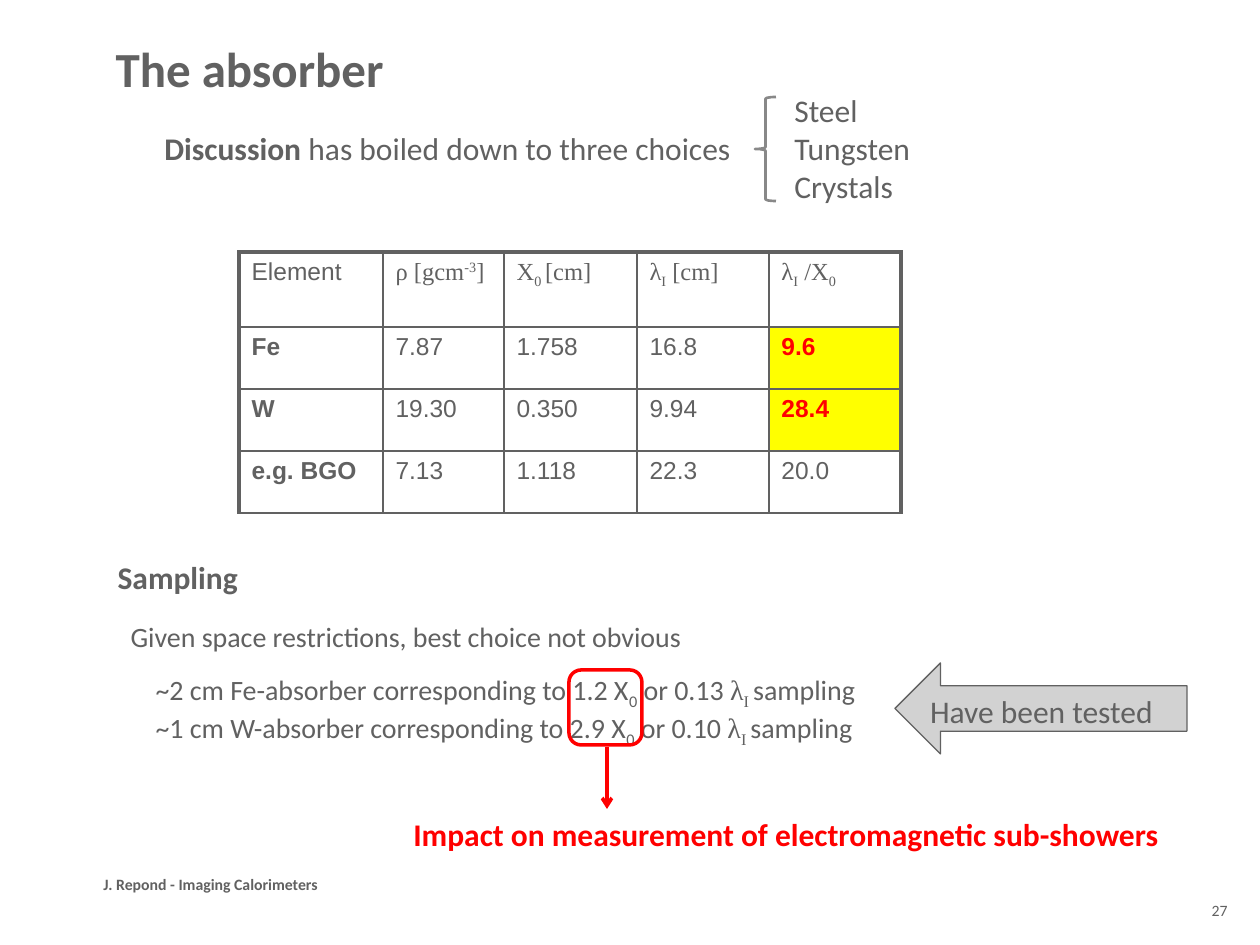
from lxml.etree import SubElement
from pptx import Presentation
from pptx.dml.color import RGBColor
from pptx.enum.shapes import MSO_CONNECTOR, MSO_SHAPE
from pptx.enum.text import MSO_ANCHOR, MSO_AUTO_SIZE, PP_ALIGN
from pptx.oxml.ns import qn
from pptx.util import Emu, Pt

GRAY = RGBColor(0x61, 0x61, 0x61)
MID = RGBColor(0x88, 0x88, 0x88)
PALE = RGBColor(0xD2, 0xD2, 0xD2)
RED = RGBColor(0xFF, 0, 0)
YELLOW = RGBColor(0xFF, 0xFF, 0)

# Text is a list of (words, marks): b bold, t Times, - subscript, + superscript
TITLE = [("The absorber", "b")]
CHOICES = [
    [("\tSteel", "")],
    [("Discussion", "b"), (" has boiled down to three choices\tTungsten", "")],
    [("\tCrystals", "")],
]
HEAD = [
    [("Element", "")],
    [("ρ [gcm", "t"), ("-3", "t+"), ("]", "t")],
    [("X", "t"), ("0 ", "t-"), ("[cm]", "t")],
    [("λ", "t"), ("I", "t-"), (" [cm]", "t")],
    [("λ", "t"), ("I", "t-"), (" /X", "t"), ("0", "t-")],
]
DATA = [
    ("Fe", "7.87", "1.758", "16.8", "9.6"),
    ("W", "19.30", "0.350", "9.94", "28.4"),
    ("e.g. BGO", "7.13", "1.118", "22.3", "20.0"),
]
HOT = {(1, 4), (2, 4)}
COLS = [144, 121, 133, 132, 132]
ROWS = [75, 62, 62, 62]
OPTIONS = [("~2 cm Fe", "1.2", "0.13"), ("~1 cm W", "2.9", "0.10")]


def px(n):
    return Emu(round(n * 914400 / 126))


def write(para, runs, size, color=GRAY, face="Calibri"):
    for words, marks in runs:
        run = para.add_run()
        run.text = words
        font = run.font
        font.size, font.bold = Pt(size), "b" in marks
        font.name = "Times New Roman" if "t" in marks else face
        font.color.rgb = color
        for mark, shift in (("-", "-25000"), ("+", "30000")):
            if mark in marks:
                run._r.get_or_add_rPr().set("baseline", shift)


def indent(para, left):
    """Set the left margin and switch the bullet off."""
    props = para._p.get_or_add_pPr()
    props.set("marL", str(px(left)))
    props.set("indent", "0")
    SubElement(props, qn("a:buNone"))


def place(shape, box):
    shape.left, shape.top, shape.width, shape.height = map(px, box)


def label(slide, box, runs, size, color=GRAY, align=PP_ALIGN.LEFT):
    frame = slide.shapes.add_textbox(*map(px, box)).text_frame
    frame.word_wrap = True
    para = frame.paragraphs[0]
    para.alignment = align
    write(para, runs, size, color)


def draw(slide, kind, box, color, width, fill=None):
    shape = slide.shapes.add_shape(kind, *map(px, box))
    shape.shadow.inherit = False
    if fill is None:
        shape.fill.background()
    else:
        shape.fill.solid()
        shape.fill.fore_color.rgb = fill
    shape.line.color.rgb = color
    shape.line.width = Pt(width)
    return shape


def border(cell, row, col):
    props = cell._tc.get_or_add_tcPr()
    thick = {"L": col == 0, "R": col == len(COLS) - 1, "T": row == 0, "B": False}
    for side, outer in thick.items():
        line = SubElement(props, qn("a:ln" + side), w=str(Pt(2.25 if outer else 1)))
        SubElement(SubElement(line, qn("a:solidFill")), qn("a:srgbClr"), val=str(GRAY))


def add_choices(slide):
    frame = slide.shapes.add_textbox(*map(px, (152, 85, 779, 127))).text_frame
    frame.word_wrap = True
    for i, runs in enumerate(CHOICES):
        para = frame.add_paragraph() if i else frame.paragraphs[0]
        tabs = SubElement(para._p.get_or_add_pPr(), qn("a:tabLst"))
        SubElement(tabs, qn("a:tab"), pos=str(px(630)), algn="l")
        write(para, runs, 18)
    draw(slide, MSO_SHAPE.LEFT_BRACE, (755, 97, 21, 104), MID, 1.5)


def add_grid(slide):
    box = map(px, (239, 252, sum(COLS), sum(ROWS)))
    table = slide.shapes.add_table(len(ROWS), len(COLS), *box).table
    table.first_row = table.horz_banding = False
    for col, wide in zip(table.columns, COLS):
        col.width = px(wide)
    for row, high in zip(table.rows, ROWS):
        row.height = px(high)
    body = [[(v, "b" if c == 0 or (r, c) in HOT else "")
             for c, v in enumerate(vals)] for r, vals in enumerate(DATA, 1)]
    for r, cells in enumerate([HEAD] + [[[run] for run in row] for row in body]):
        for c, runs in enumerate(cells):
            cell, hot = table.cell(r, c), (r, c) in HOT
            border(cell, r, c)
            if hot:
                cell.fill.solid()
                cell.fill.fore_color.rgb = YELLOW
            else:
                cell.fill.background()
            write(cell.text_frame.paragraphs[0], runs, 14, RED if hot else GRAY, "Arial")


def add_body(slide):
    lines = [
        ([("Sampling", "b")], 18, 0, 0),
        ([("Given space restrictions, best choice not obvious", "")], 16, 13, 13.4),
    ]
    for i, (metal, x, lam) in enumerate(OPTIONS):
        runs = [(f"{metal}-absorber corresponding to {x} X", ""), ("0", "-"),
                (f" or {lam} ", ""), ("λ", "t"), ("I ", "t-"), ("sampling", "")]
        lines.append((runs, 16, 38, 0 if i else 11))
    body = slide.placeholders[1]
    place(body, (105, 552, 777, 195))
    frame = body.text_frame
    frame.auto_size = MSO_AUTO_SIZE.NONE
    for i, (runs, size, left, gap) in enumerate(lines):
        para = frame.add_paragraph() if i else frame.paragraphs[0]
        indent(para, left)
        para.space_before = Pt(gap)
        write(para, runs, size)


def add_marks(slide):
    arrow = draw(slide, MSO_SHAPE.LEFT_ARROW, (895, 663, 292, 91), GRAY, 0.75, PALE)
    frame = arrow.text_frame
    frame.vertical_anchor = MSO_ANCHOR.TOP
    frame.paragraphs[0].alignment = PP_ALIGN.LEFT
    write(frame.paragraphs[0], [("Have been tested", "")], 18)

    draw(slide, MSO_SHAPE.ROUNDED_RECTANGLE, (569, 670, 73, 75), RED, 2)
    ends = map(px, (607, 747, 607, 809))
    link = slide.shapes.add_connector(MSO_CONNECTOR.STRAIGHT, *ends)
    link.line.color.rgb = RED
    link.line.width = Pt(2)
    SubElement(link.line._get_or_add_ln(), qn("a:tailEnd"), type="arrow")
    SubElement(link._element.spPr, qn("a:effectLst"))


def main():
    deck = Presentation()
    deck.slide_width, deck.slide_height = px(1260), px(945)
    slide = deck.slides.add_slide(deck.slide_layouts[1])

    title = slide.shapes.title
    place(title, (103, 32, 400, 72))
    title.text_frame.vertical_anchor = MSO_ANCHOR.TOP
    title.text_frame.auto_size = MSO_AUTO_SIZE.NONE
    title.text_frame.paragraphs[0].alignment = PP_ALIGN.LEFT
    write(title.text_frame.paragraphs[0], TITLE, 28)

    add_choices(slide)
    add_grid(slide)
    add_body(slide)
    add_marks(slide)
    impact = "Impact on measurement of electromagnetic sub-showers"
    label(slide, (401, 809, 780, 50), [(impact, "b")], 18, RED)
    label(slide, (91, 869, 819, 32), [("J. Repond - Imaging Calorimeters", "b")], 9)
    label(slide, (1187, 895, 53, 50), [("27", "")], 9, align=PP_ALIGN.RIGHT)
    deck.save("out.pptx")


if __name__ == "__main__":
    main()
